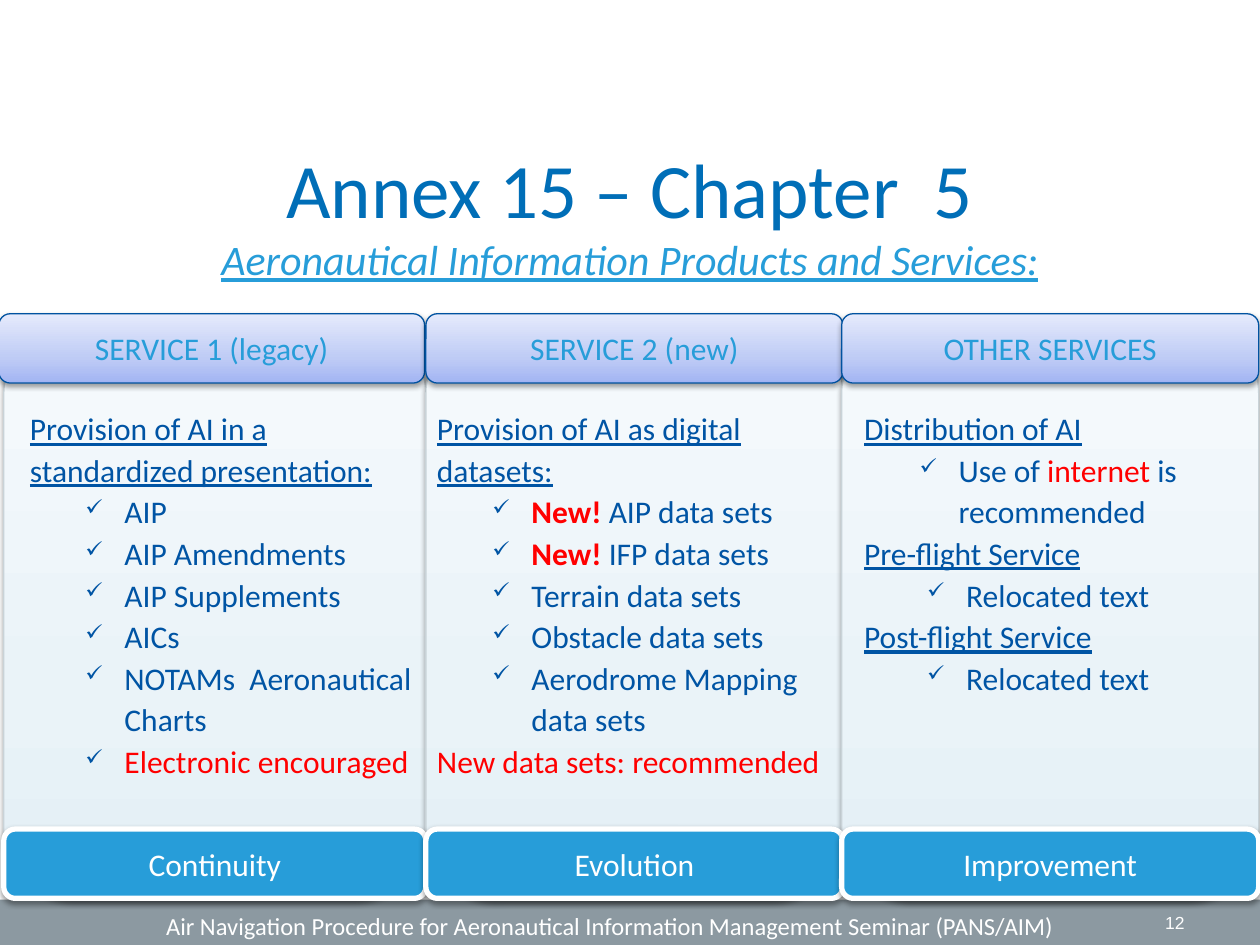
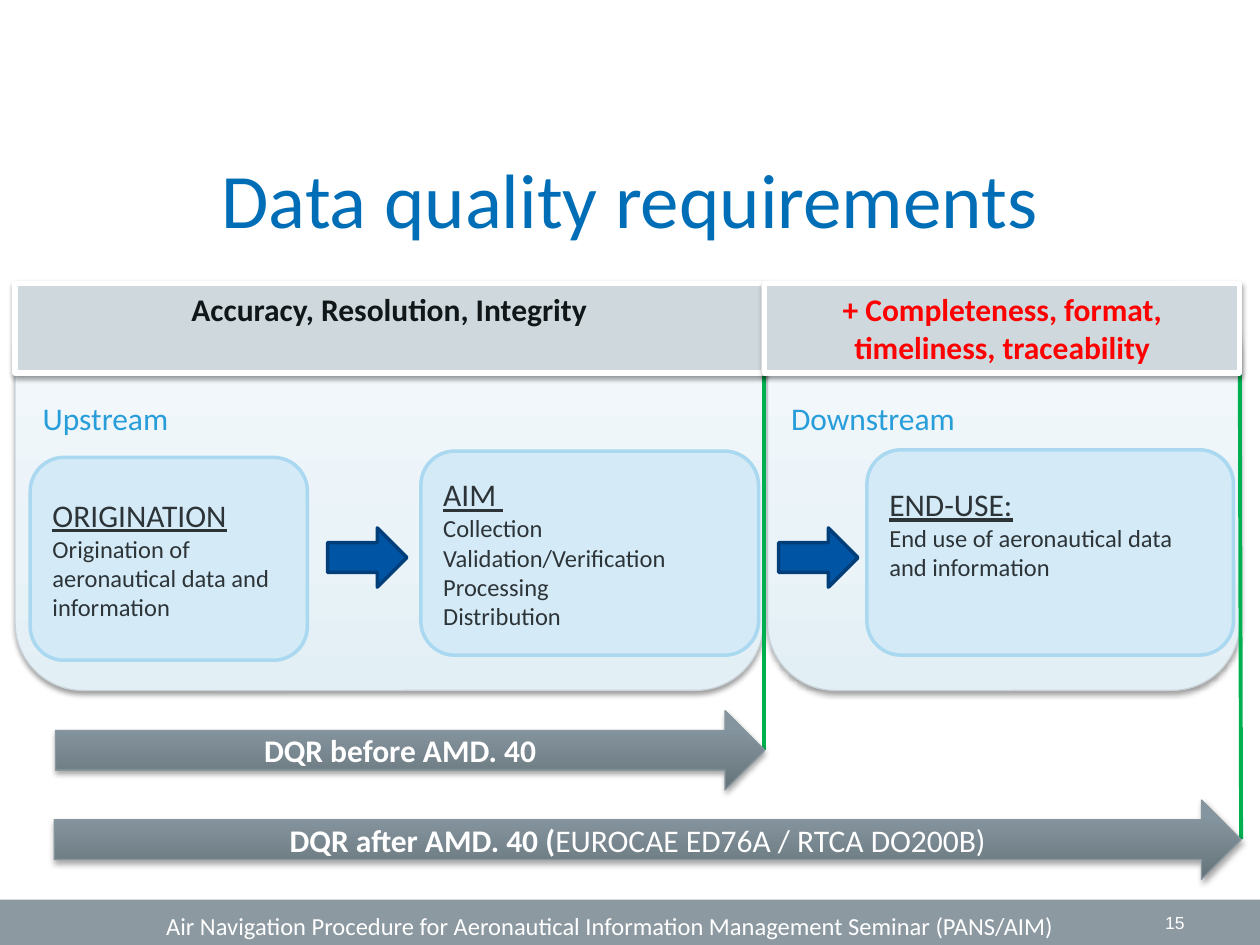
from dataclasses import dataclass

import pptx
import pptx.util
import pptx.dml.color
import pptx.enum.shapes
import pptx.enum.text
import pptx.oxml
import pptx.oxml.ns
from lxml import etree

Inches = pptx.util.Inches
Pt = pptx.util.Pt
SHAPE = pptx.enum.shapes.MSO_SHAPE
ALIGN = pptx.enum.text.PP_ALIGN
ANCHOR = pptx.enum.text.MSO_ANCHOR
qn = pptx.oxml.ns.qn

# Shared colours and gradients, running from bottom to top
WHITE, RED, GREEN = "FFFFFF", "FF0000", "00B050"
TITLE_BLUE, SKY, NAVY, INK = "006EB7", "279DD9", "0054A4", "2D3438"
BAND_GREY = "8C99A1"
PANEL_FILL = [(0, "E2EFF5"), (35, "EAF3F8"), (100, "F6FAFD")]
HEADER_FILL = [(0, "A2B4F3"), (35, "BECBF5"), (100, "E5EAFC")]
ARROW_FILL = [(0, "66737A"), (80, "85959F"), (100, "8596A0")]
FOOTER = ("Air Navigation Procedure for Aeronautical Information "
          "Management Seminar (PANS/AIM)")


@dataclass
class Span:
    text: str
    size: float = 18
    color: str = NAVY
    bold: bool = False
    italic: bool = False
    underline: bool = False
    font: str = "Calibri"


def rgb(color):
    return pptx.dml.color.RGBColor.from_string(color)


def add_color(parent, color):
    return etree.SubElement(parent, qn("a:srgbClr"), val=color)


# Text
def write_para(para, spans, align=ALIGN.LEFT):
    para.alignment = align
    for span in spans:
        run = para.add_run()
        run.text = span.text
        font = run.font
        font.name, font.size = span.font, Pt(span.size)
        font.bold, font.italic = span.bold, span.italic
        font.underline = span.underline
        font.color.rgb = rgb(span.color)


def write_paras(shape, paras, align=ALIGN.LEFT, anchor=ANCHOR.TOP):
    """Fill a shape with paragraphs, each a list of spans."""
    frame = shape.text_frame
    frame.word_wrap = True
    frame.vertical_anchor = anchor
    for index, spans in enumerate(paras):
        para = frame.add_paragraph() if index else frame.paragraphs[0]
        write_para(para, spans, align)


def add_text(page, left, top, width, height, paras, **layout):
    box = page.shapes.add_textbox(
        Inches(left), Inches(top), Inches(width), Inches(height))
    write_paras(box, paras, **layout)
    return box


def set_outline_level(para, level, indent):
    """Level 1 is a plain heading, level 2 a ticked item."""
    para.level = level
    para.line_spacing = 1.1
    props = para._p.get_or_add_pPr()
    hanging = 0.31 if level == 2 else 0
    props.set("marL", str(Inches(indent)))
    props.set("indent", str(-Inches(hanging)))
    if level == 2:
        add_color(etree.SubElement(props, qn("a:buClr")), NAVY)
        etree.SubElement(props, qn("a:buSzPct"), val="70000")
        etree.SubElement(props, qn("a:buChar"), char="✓")
    else:
        etree.SubElement(props, qn("a:buNone"))


def add_outline(page, left, width, entries, item_indents):
    """Entries are (level, spans); item_indents lists each tick's indent."""
    box = add_text(page, left, 3.17, width, 3.43,
                   [spans for level, spans in entries])
    indents = iter(item_indents)
    for para, (level, spans) in zip(box.text_frame.paragraphs, entries):
        set_outline_level(para, level, next(indents) if level == 2 else 0.31)


# Shapes
def fill_gradient(shape, stops):
    shape.fill.gradient()
    shape.fill.gradient_angle = 90
    stop_list = shape._element.spPr.find(qn("a:gradFill")).find(qn("a:gsLst"))
    for stop in list(stop_list):
        stop_list.remove(stop)
    for position, color in stops:
        stop = etree.SubElement(stop_list, qn("a:gs"), pos=str(position * 1000))
        add_color(stop, color)


def add_shadow(shape, opacity=38):
    effects = shape._element.spPr.find(qn("a:effectLst"))
    shadow = etree.SubElement(
        effects, qn("a:outerShdw"), blurRad=str(Pt(3.1)), dist=str(Pt(1.6)),
        dir="5400000", rotWithShape="0")
    etree.SubElement(add_color(shadow, "000000"), qn("a:alpha"),
                     val=str(opacity * 1000))


def add_block(page, kind, left, top, width, height, fill, line=None,
              line_width=0.75, shadow=0):
    shape = page.shapes.add_shape(
        kind, Inches(left), Inches(top), Inches(width), Inches(height))
    if isinstance(fill, str):
        shape.fill.solid()
        shape.fill.fore_color.rgb = rgb(fill)
    else:
        fill_gradient(shape, fill)
    if line:
        shape.line.color.rgb = rgb(line)
        shape.line.width = Pt(line_width)
    else:
        shape.line.fill.background()
    shape.shadow.inherit = False
    if shadow:
        add_shadow(shape, shadow)
    return shape


def add_panel(page, left, top, width, height):
    add_block(page, SHAPE.ROUNDED_RECTANGLE, left, top, width, height,
              PANEL_FILL, "C9D3D8", shadow=38)


def add_label_bar(page, left, top, width, label, fill, line, line_width, color):
    bar = add_block(page, SHAPE.ROUNDED_RECTANGLE, left, top, width, 0.55,
                    fill, line, line_width, shadow=38)
    write_paras(bar, [[Span(label, color=color)]], ALIGN.CENTER, ANCHOR.MIDDLE)


def add_card(page, left, top, width, height, heading, details):
    card = add_block(page, SHAPE.ROUNDED_RECTANGLE, left, top, width, height,
                     "D4EBF7", "A9D8F0", 2)
    paras = [[Span(heading, color=INK, underline=True)]]
    paras += [[Span(detail, 14, INK)] for detail in details]
    write_paras(card, paras, anchor=ANCHOR.MIDDLE)
    return card


def add_requirement_header(page, left, width, label, color):
    header = add_block(page, SHAPE.RECTANGLE, left, 2.25, width, 0.71,
                       "CED8DD", WHITE, 3, shadow=38)
    write_paras(header, [[Span(label, color=color, bold=True)]], ALIGN.CENTER)


def add_scope_arrow(page, left, top, width, spans):
    arrow = add_block(page, SHAPE.RIGHT_ARROW, left, top, width, 0.63,
                      ARROW_FILL, "88969E", shadow=35)
    write_paras(arrow, [spans], ALIGN.CENTER, ANCHOR.MIDDLE)


def add_limit_line(page, x1, y1, x2, y2):
    line = page.shapes.add_connector(
        pptx.enum.shapes.MSO_CONNECTOR.STRAIGHT,
        Inches(x1), Inches(y1), Inches(x2), Inches(y2))
    line.line.color.rgb = rgb(GREEN)
    line.line.width = Pt(2.25)
    etree.SubElement(line._element.spPr, qn("a:effectLst"))


# Page frame
def add_page(deck, number):
    page = deck.slides.add_slide(deck.slide_layouts[6])
    add_block(page, SHAPE.RECTANGLE, 0, 7.14, 10, 0.36, BAND_GREY)
    add_text(page, 7.17, 7.14, 2.33, 0.36,
             [[Span(str(number), 10, WHITE, font="Arial")]],
             align=ALIGN.RIGHT, anchor=ANCHOR.MIDDLE)
    return page


def add_title(page, top, title, subtitle=None):
    paras = [[Span(title, 44, TITLE_BLUE)]]
    if subtitle:
        paras.append([Span(subtitle, 24, SKY, italic=True, underline=True)])
    add_text(page, 0.5, top, 9, 1.25, paras, align=ALIGN.CENTER)


def add_footer(page):
    add_text(page, 1.22, 7.18, 7.72, 0.32, [[Span(FOOTER, 14, WHITE)]])


# Slides
def heading(text):
    return 1, [Span(text, underline=True)]


def item(*spans):
    return 2, [Span(span) if isinstance(span, str) else span for span in spans]


def build_services(deck):
    page = add_page(deck, 12)
    add_title(page, 1.07, "Annex 15 – Chapter  5",
              "Aeronautical Information Products and Services:")

    columns = [(0.03, 3.35), (3.38, 3.31), (6.68, 3.31)]
    headers = [(-0.01, 3.38)] + columns[1:]
    names = ["SERVICE 1 (legacy)", "SERVICE 2 (new)", "OTHER SERVICES"]
    outcomes = ["Continuity", "Evolution", "Improvement"]
    for left, width in columns:
        add_panel(page, left, 2.57, width, 4.57)
    for (left, width), name in zip(headers, names):
        add_label_bar(page, left, 2.49, width, name,
                      HEADER_FILL, "0052A0", 0.75, SKY)
    for (left, width), outcome in zip(columns, outcomes):
        add_label_bar(page, left, 6.58, width, outcome, SKY, WHITE, 3, WHITE)

    legacy = [heading("Provision of AI in a standardized presentation:")]
    legacy += [item(name) for name in (
        "AIP", "AIP Amendments", "AIP Supplements", "AICs",
        "NOTAMs  Aeronautical Charts")]
    legacy.append(item(Span("Electronic encouraged", color=RED)))
    add_outline(page, -0.17, 3.54, legacy, [1.06] * 6)

    datasets = [heading("Provision of AI as digital datasets:")]
    datasets += [item(Span("New!", color=RED, bold=True), f" {name} data sets")
                 for name in ("AIP", "IFP")]
    datasets += [item(f"{name} data sets")
                 for name in ("Terrain", "Obstacle", "Aerodrome Mapping")]
    datasets.append((1, [Span("New data sets: recommended", color=RED)]))
    add_outline(page, 3.06, 3.62, datasets, [1.06] * 5)

    others = [heading("Distribution of AI"),
              item("Use of ", Span("internet ", color=RED), "is recommended")]
    for service in ("Pre-flight Service", "Post-flight Service"):
        others += [heading(service), item("Relocated text")]
    add_outline(page, 6.45, 3.54, others, [1.06, 1.12, 1.12])
    add_footer(page)


def build_quality(deck):
    page = add_page(deck, 15)
    add_panel(page, 6.09, 2.25, 3.75, 3.23)
    add_panel(page, 0.12, 2.25, 5.94, 3.23)
    add_title(page, 1.15, "Data quality requirements")

    # Data chain
    add_card(page, 0.24, 3.63, 2.2, 1.61, "ORIGINATION",
             ["Origination of aeronautical data and information"])
    add_card(page, 3.34, 3.58, 2.68, 1.62, "AIM ",
             ["Collection", "Validation/Verification", "Processing",
              "Distribution"])
    end_use = add_card(page, 6.88, 3.57, 2.91, 1.63, "END-USE:",
                       ["End use of aeronautical data and information"])
    end_use.text_frame.margin_bottom = Inches(0.35)
    for left in (2.6, 6.18):
        add_block(page, SHAPE.RIGHT_ARROW, left, 4.19, 0.63, 0.47,
                  NAVY, "003E79", 2)
    for left, stage in ((0.24, "Upstream"), (6.18, "Downstream")):
        add_text(page, left, 3.12, 2.48, 0.4, [[Span(stage, color=SKY)]])

    # Scope of the requirements
    add_limit_line(page, 6.06, 2.96, 6.06, 5.95)
    add_scope_arrow(page, 0.44, 5.64, 5.63,
                    [Span("DQR before AMD. 40", color=WHITE, bold=True)])
    add_limit_line(page, 9.84, 2.96, 9.85, 6.66)
    add_scope_arrow(page, 0.43, 6.35, 9.42,
                    [Span("DQR after AMD. 40 (", color=WHITE, bold=True),
                     Span("EUROCAE ED76A / RTCA DO200B)", color=WHITE)])
    add_requirement_header(page, 0.12, 5.94,
                           "Accuracy, Resolution, Integrity", "111719")
    add_requirement_header(page, 6.07, 3.77,
                           "+ Completeness, format, timeliness, traceability",
                           RED)
    add_footer(page)


def main():
    deck = pptx.Presentation()
    deck.slide_width, deck.slide_height = Inches(10), Inches(7.5)
    build_services(deck)
    build_quality(deck)
    deck.save("out.pptx")


if __name__ == "__main__":
    main()
